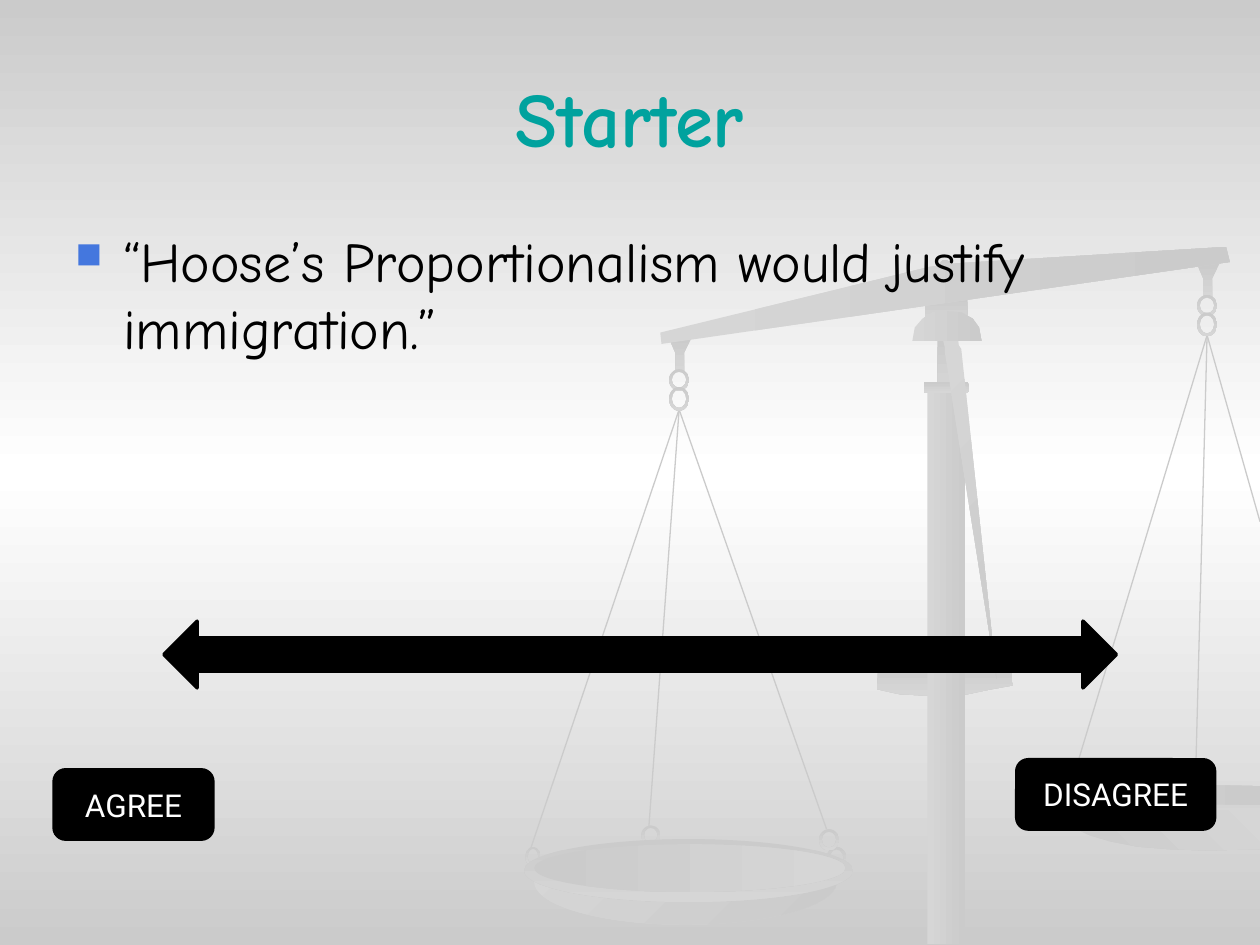
from copy import deepcopy
from lxml import etree
from pptx import Presentation
from pptx.dml.color import RGBColor
from pptx.enum.shapes import MSO_CONNECTOR, MSO_SHAPE
from pptx.enum.text import MSO_ANCHOR, PP_ALIGN
from pptx.oxml.ns import qn
from pptx.util import Inches, Pt

RECT, OVAL, DONUT = MSO_SHAPE.RECTANGLE, MSO_SHAPE.OVAL, MSO_SHAPE.DONUT
ROUND, ARROW = MSO_SHAPE.ROUNDED_RECTANGLE, MSO_SHAPE.LEFT_RIGHT_ARROW
STRAIGHT = MSO_CONNECTOR.STRAIGHT
CENTER, LEFT = PP_ALIGN.CENTER, PP_ALIGN.LEFT
TOP, MIDDLE = MSO_ANCHOR.TOP, MSO_ANCHOR.MIDDLE

THEME = {
    "edge": "CBCBCB", "pale": "D6D6D6", "white": "FFFFFF", "black": "000000",
    "title": "00A29E", "bullet": "4477DE",
    "hand": "Comic Neue", "label": "Roboto",
    "title_size": 44, "body_size": 32, "label_size": 18,
}

# Content
TITLE = "Starter"
STATEMENT = "“Hoose’s Proportionalism would justify immigration.”"
LABELS = [("AGREE", (0.43, 6.11, 1.26, 0.55)),
          ("DISAGREE", (8.07, 6.03, 1.57, 0.55))]
SCALE_ARROW = (1.3, 4.93, 7.56, 0.53)

# Balance: gradients as (first colour, last colour, clockwise angle)
DOWN = ("edge", "pale", 90)
ACROSS = ("pale", "edge", 0)
ACROSS_BACK = ("edge", "pale", 0)
DIAGONAL = ("pale", "edge", 45)
DIAGONAL_UP = ("edge", "pale", 315)

# Strings: hanging point and the lower ends
STRINGS = [((9.58, 2.66), [(8.53, 6.13), (9.49, 6.13), (10, 4.14)]),
           ((5.39, 3.25), [(6.56, 6.58), (4.21, 6.74), (5.15, 6.56)])]

# Outlines
FOOT = [(6.97, 5.28), (7.24, 5.31), (7.39, 5.31), (7.57, 5.3), (7.78, 5.28),
        (8.02, 5.24), (8.04, 5.44), (7.82, 5.48), (7.68, 5.51), (7.51, 5.52),
        (7.33, 5.52), (7.14, 5.51), (6.96, 5.47)]
RIGHT_RIM = [(10, 6.26), (9.58, 6.24), (9.1, 6.24), (8.65, 6.23), (8.46, 6.24),
             (8.31, 6.26), (8.27, 6.28), (8.32, 6.33), (8.52, 6.38),
             (8.78, 6.41), (9.14, 6.44), (9.58, 6.45), (10, 6.45)]
RIGHT_BOWL = [(8.31, 6.33), (8.35, 6.42), (8.42, 6.49), (8.52, 6.57),
              (8.65, 6.63), (8.82, 6.68), (9.03, 6.72), (9.28, 6.74),
              (9.57, 6.75), (10, 6.74), (10, 6.43), (9.53, 6.43),
              (9.18, 6.42), (8.86, 6.4), (8.57, 6.37)]
RIGHT_INSIDE = [(10, 6.24), (9.56, 6.23), (8.62, 6.23), (8.43, 6.26),
                (8.34, 6.28), (8.43, 6.31), (8.63, 6.34), (8.93, 6.37),
                (9.33, 6.38), (10, 6.39)]
HANGER = [(0.18, 0), (0, 0.01), (0.05, 0.12), (0.05, 0.27), (0.12, 0.27),
          (0.12, 0.12)]
HANGERS = [(5.31, 2.68), (9.5, 2.09)]
BEAM = [(9.73, 1.96), (9.76, 2.08), (5.25, 2.73), (5.24, 2.64),
        (7.37, 2.12), (7.59, 2.09)]
STRUT = [(7.91, 5.39), (7.5, 2.8), (7.5, 2.76), (7.48, 2.68), (7.6, 2.65),
         (7.61, 2.74), (7.63, 2.77)]
CAP = [(7.52, 2.47), (7.63, 2.48), (7.72, 2.53), (7.77, 2.6), (7.79, 2.71),
       (7.24, 2.71), (7.26, 2.6), (7.32, 2.53), (7.4, 2.48)]

# Parts from back to front: (preset or None, box or outline, gradient)
BACK_PARTS = [(RECT, (7.34, 2.37, 0.34, 0.18), DOWN),
              (OVAL, (7.46, 2.06, 0.08, 0.08), DOWN)]
FRONT_PARTS = [
    (None, FOOT, DOWN),
    (None, RIGHT_RIM, DOWN),
    (None, RIGHT_BOWL, DIAGONAL_UP),
    (None, RIGHT_INSIDE, ACROSS),
    *[(None, [(x + dx, y + dy) for dx, dy in HANGER], DOWN) for x, y in HANGERS],
    *[(DONUT, (x, y + dy, 0.16, h), DOWN)
      for x, y in HANGERS for dy, h in ((0.25, 0.17), (0.39, 0.19))],
    (None, BEAM, ACROSS),
    (DONUT, (5.09, 6.55, 0.15, 0.16), DOWN),
    (DONUT, (6.56, 6.72, 0.16, 0.19), DOWN),
    (DONUT, (4.17, 6.72, 0.12, 0.16), DOWN),
    (OVAL, (4.24, 6.66, 2.4, 0.68), DIAGONAL),
    (OVAL, (4.16, 6.66, 2.61, 0.5), DOWN),
    (OVAL, (4.24, 6.7, 2.47, 0.38), ACROSS_BACK),
    (DONUT, (6.5, 6.58, 0.16, 0.17), DOWN),
    (RECT, (7.36, 3.08, 0.3, 4.41), ACROSS),
    (RECT, (7.44, 2.68, 0.13, 0.42), DOWN),
    (ROUND, (7.33, 3.03, 0.36, 0.09), DOWN),
    (None, STRUT, DIAGONAL),
    (None, CAP, ACROSS),
]


def rgb(name):
    return RGBColor.from_string(THEME[name])


def set_gradient(fill, first, last, angle):
    fill.gradient()
    fill.gradient_angle = -angle % 360
    for stop, name in zip(fill.gradient_stops, (first, last)):
        stop.color.rgb = rgb(name)


def add_part(s, preset, geometry, gradient):
    if preset is None:
        pts = [(Inches(x), Inches(y)) for x, y in geometry]
        builder = s.shapes.build_freeform(*pts[0])
        builder.add_line_segments(pts[1:], close=True)
        sp = builder.convert_to_shape()
    else:
        sp = s.shapes.add_shape(preset, *map(Inches, geometry))
        if preset == DONUT:
            sp.adjustments[0] = 0.14
    sp.shadow.inherit = False
    sp.line.fill.background()
    set_gradient(sp.fill, *gradient)


def add_string(s, start, end):
    line = s.shapes.add_connector(STRAIGHT, *map(Inches, start + end))
    line.line.color.rgb = rgb("edge")
    line.line.width = Pt(0.75)
    etree.SubElement(line._element.spPr, qn("a:effectLst"))


def write(sp, text, font, size, color, align=CENTER, anchor=MIDDLE, bold=False):
    tf = sp.text_frame
    tf.word_wrap = True
    tf.vertical_anchor = anchor
    p = tf.paragraphs[0]
    p.alignment = align
    r = p.add_run()
    r.text = text
    r.font.name, r.font.size = THEME[font], Pt(THEME[size])
    r.font.bold = bold
    r.font.color.rgb = rgb(color)
    return p


def add_bullet(p):
    pPr = p._p.get_or_add_pPr()
    pPr.set("marL", str(Inches(0.38)))
    pPr.set("indent", str(Inches(-0.38)))
    color = etree.SubElement(pPr, qn("a:buClr"))
    etree.SubElement(color, qn("a:srgbClr"), val=THEME["bullet"])
    etree.SubElement(pPr, qn("a:buSzPct"), val="65000")
    etree.SubElement(pPr, qn("a:buChar"), char="■")


def add_black(s, preset, box):
    sp = s.shapes.add_shape(preset, *map(Inches, box))
    sp.shadow.inherit = False
    sp.fill.solid()
    sp.fill.fore_color.rgb = sp.line.color.rgb = rgb("black")
    sp.line.width = Pt(2)
    return sp


prs = Presentation()
prs.slide_width, prs.slide_height = Inches(10), Inches(7.5)
s = prs.slides.add_slide(prs.slide_layouts[6])

# Background: grey edges with a white band in the middle
bg = s.background.fill
set_gradient(bg, "edge", "edge", 90)
first = s.background._cSld.find(".//" + qn("a:gs"))
first.addnext(deepcopy(first))
middle = bg.gradient_stops[1]
middle.position = 0.5
middle.color.rgb = rgb("white")

# Balance
for part in BACK_PARTS:
    add_part(s, *part)
for hook, ends in STRINGS:
    for end in ends:
        add_string(s, hook, end)
for part in FRONT_PARTS:
    add_part(s, *part)

# Title and statement
title = s.shapes.add_textbox(*map(Inches, (0.5, 0.3, 9, 1.25)))
write(title, TITLE, "hand", "title_size", "title", bold=True)
body = s.shapes.add_textbox(*map(Inches, (0.5, 1.75, 9, 4.95)))
p = write(body, STATEMENT, "hand", "body_size", "black", LEFT, TOP)
p.space_before = Pt(0.2 * THEME["body_size"])
add_bullet(p)

# Opinion line
for text, box in LABELS:
    write(add_black(s, ROUND, box), text, "label", "label_size", "white")
add_black(s, ARROW, SCALE_ARROW)

prs.save("out.pptx")
